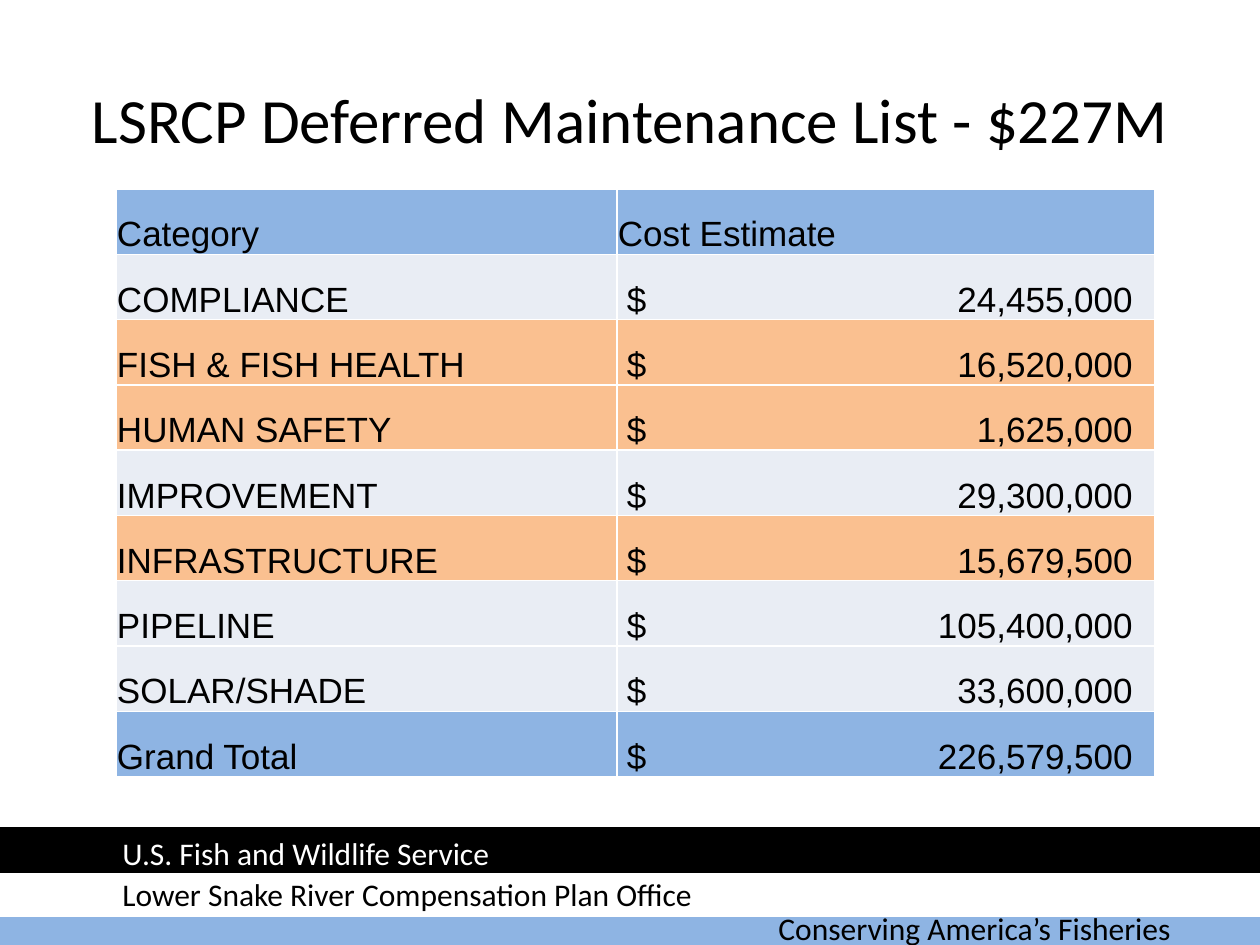
"""Build the deferred maintenance cost slide with its table and footer bands."""
from dataclasses import dataclass

from lxml.etree import SubElement
from pptx import Presentation
from pptx.dml.color import RGBColor
from pptx.enum.shapes import MSO_SHAPE
from pptx.enum.text import MSO_ANCHOR, MSO_AUTO_SIZE, PP_ALIGN
from pptx.oxml.ns import qn
from pptx.util import Emu, Pt


@dataclass(frozen=True)
class Theme:
    blue: str = "8EB4E3"
    pale: str = "E9EDF4"
    orange: str = "FAC090"
    black: str = "000000"
    white: str = "FFFFFF"
    heading_font: str = "Calibri"
    table_font: str = "Arial"
    title_size: int = 36
    table_size: int = 20
    footer_size: int = 18


THEME = Theme()
TITLE = "LSRCP Deferred Maintenance List - $227M"
ROWS = [
    ("Category", "Cost Estimate", THEME.blue),
    ("COMPLIANCE", 24455000, THEME.pale),
    ("FISH & FISH HEALTH", 16520000, THEME.orange),
    ("HUMAN SAFETY", 1625000, THEME.orange),
    ("IMPROVEMENT", 29300000, THEME.pale),
    ("INFRASTRUCTURE", 15679500, THEME.orange),
    ("PIPELINE", 105400000, THEME.pale),
    ("SOLAR/SHADE", 33600000, THEME.pale),
    ("Grand Total", 226579500, THEME.blue),
]
BANDS = [(-1, 903, THEME.blue), (0, 873, THEME.white), (0, 829, THEME.black)]
FOOTERS = [
    ("Conserving America’s Fisheries", 766, 903, 462, THEME.black),
    ("U.S. Fish and Wildlife Service", 110, 828, 524, THEME.white),
    ("Lower Snake River Compensation Plan Office", 110, 869, 626, THEME.black),
]
SLIDE_W, SLIDE_H = 1260, 945
BAND_H, FOOTER_H = 42, 50
TABLE_X, TABLE_Y, ROW_H = 116, 189, 65.33
COL_WIDTHS = (501, 538)
CELL_PAD, AMOUNT_PAD, AMOUNT_TAB = 1, 10, 506


def px(n):
    return Emu(round(n * 914400 / 126))


def box(x, y, w, h):
    return px(x), px(y), px(w), px(h)


def style(p, font, size, color):
    p.font.name = font
    p.font.size = Pt(size)
    p.font.color.rgb = RGBColor.from_string(color)


def add_band(s, x, y, color):
    sp = s.shapes.add_shape(MSO_SHAPE.RECTANGLE, *box(x, y, SLIDE_W, BAND_H))
    sp.shadow.inherit = False
    sp.fill.solid()
    sp.fill.fore_color.rgb = RGBColor.from_string(color)
    sp.line.color.rgb = RGBColor.from_string(color)
    sp.line.width = Pt(2)


def add_footer(s, text, x, y, w, color):
    tf = s.shapes.add_textbox(*box(x, y, w, FOOTER_H)).text_frame
    tf.word_wrap = True
    tf.auto_size = MSO_AUTO_SIZE.SHAPE_TO_FIT_TEXT
    tf.text = text
    style(tf.paragraphs[0], THEME.heading_font, THEME.footer_size, color)


def add_borders(cell):
    tc_pr = cell._tc.get_or_add_tcPr()
    for side in ("a:lnL", "a:lnR", "a:lnT", "a:lnB"):
        ln = SubElement(tc_pr, qn(side), w=str(Pt(1)))
        fill = SubElement(ln, qn("a:solidFill"))
        SubElement(fill, qn("a:srgbClr"), val=THEME.white)


def fill_cell(cell, value, color):
    is_amount = isinstance(value, int)
    add_borders(cell)
    cell.fill.solid()
    cell.fill.fore_color.rgb = RGBColor.from_string(color)
    cell.vertical_anchor = MSO_ANCHOR.BOTTOM
    cell.margin_left = px(AMOUNT_PAD if is_amount else CELL_PAD)
    cell.margin_right = cell.margin_top = px(CELL_PAD)
    cell.margin_bottom = 0
    p = cell.text_frame.paragraphs[0]
    p.text = f"$\t{value:,}" if is_amount else value
    if is_amount:
        tabs = SubElement(p._p.get_or_add_pPr(), qn("a:tabLst"))
        SubElement(tabs, qn("a:tab"), pos=str(px(AMOUNT_TAB)), algn="r")
    style(p, THEME.table_font, THEME.table_size, THEME.black)


def add_cost_table(s):
    frame = s.shapes.add_table(
        len(ROWS), len(COL_WIDTHS),
        *box(TABLE_X, TABLE_Y, sum(COL_WIDTHS), ROW_H * len(ROWS)))
    table = frame.table
    for column, width in zip(table.columns, COL_WIDTHS):
        column.width = px(width)
    for row, (category, cost, color) in zip(table.rows, ROWS):
        row.height = px(ROW_H)
        for cell, value in zip(row.cells, (category, cost)):
            fill_cell(cell, value, color)


def add_title(s):
    sp = s.shapes.title
    sp.left, sp.top, sp.width, sp.height = box(63, 63, 1134, 110)
    tf = sp.text_frame
    tf.text = TITLE
    tf.vertical_anchor = MSO_ANCHOR.MIDDLE
    p = tf.paragraphs[0]
    p.alignment = PP_ALIGN.CENTER
    style(p, THEME.heading_font, THEME.title_size, THEME.black)


def main():
    prs = Presentation()
    prs.slide_width, prs.slide_height = px(SLIDE_W), px(SLIDE_H)
    s = prs.slides.add_slide(prs.slide_layouts[5])
    for band in BANDS:
        add_band(s, *band)
    for footer in FOOTERS:
        add_footer(s, *footer)
    add_title(s)
    add_cost_table(s)
    prs.save("out.pptx")


if __name__ == "__main__":
    main()
